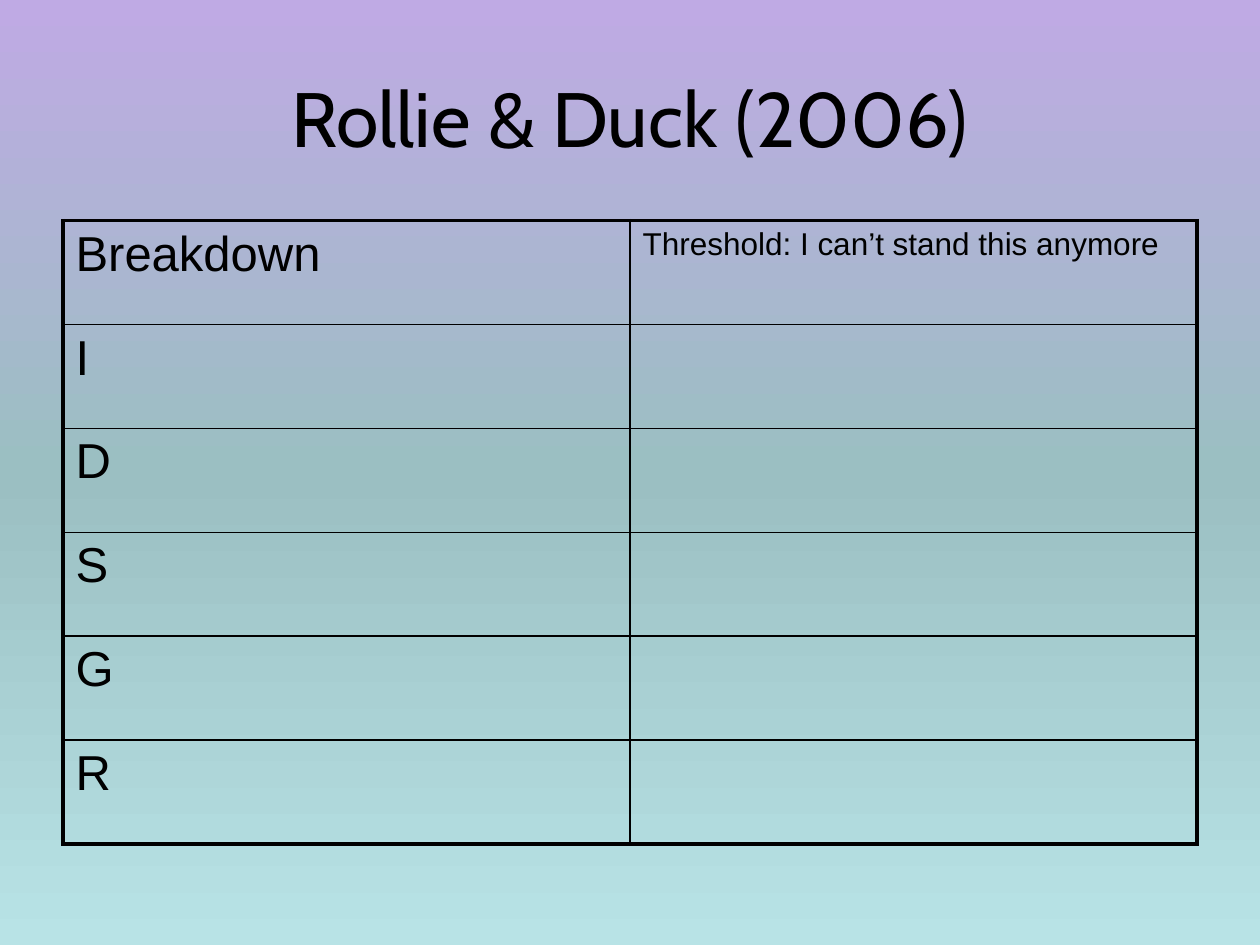
from lxml import etree
from pptx import Presentation
from pptx import util as u
from pptx.dml import color
from pptx.enum import text
from pptx.oxml import ns

COLORS = {"ink": "000000", "lilac": "BFAAE4", "teal": "9BBFC2", "aqua": "B8E3E6"}
LABELS = ["Breakdown", "I", "D", "S", "G", "R"]
THRESHOLD = "Threshold: I can’t stand this anymore"
THIN, THICK = 1, 2.25


def write(frame, words, size, font="Arial", align=text.PP_ALIGN.LEFT, before=None):
    paragraph = frame.paragraphs[0]
    paragraph.alignment = align
    if before:
        properties = paragraph._p.get_or_add_pPr()
        spacing = etree.SubElement(properties, ns.qn("a:spcBef"))
        etree.SubElement(spacing, ns.qn("a:spcPct"), val=str(before * 1000))
    run = paragraph.add_run()
    run.text = words
    run.font.size = u.Pt(size)
    run.font.name = font
    run.font.color.rgb = color.RGBColor.from_string(COLORS["ink"])


def add_color(parent, name):
    etree.SubElement(parent, ns.qn("a:srgbClr"), val=COLORS[name])


presentation = Presentation()
presentation.slide_width = u.Inches(10)
presentation.slide_height = u.Inches(7.5)
slide = presentation.slides.add_slide(presentation.slide_layouts[6])

# Background: three-colour gradient running downwards
fill = slide.background.fill
fill.gradient()
fill.gradient_angle = 270
stops = slide.element.xpath(".//a:gsLst")[0]
for stop in list(stops):
    stops.remove(stop)
for position, name in [(0, "lilac"), (50, "teal"), (100, "aqua")]:
    stop = etree.SubElement(stops, ns.qn("a:gs"), pos=str(position * 1000))
    add_color(stop, name)

# Title
title = slide.shapes.add_textbox(u.Inches(0.5), u.Inches(0.3), u.Inches(9), u.Inches(1.25))
title.text_frame.word_wrap = True
title.text_frame.vertical_anchor = text.MSO_ANCHOR.MIDDLE
write(title.text_frame, "Rollie & Duck (2006)", 44, font="Cabin", align=text.PP_ALIGN.CENTER)

# Table with equal rows and columns
table = slide.shapes.add_table(
    len(LABELS), 2, u.Inches(0.5), u.Inches(1.75), u.Inches(9), u.Inches(4.95)
).table
table.first_row = False
table.horz_banding = False
for row, label in enumerate(LABELS):
    write(table.cell(row, 0).text_frame, label, 28, before=20)
write(table.cell(0, 1).text_frame, THRESHOLD, 18, before=20)

# Cell borders: thick around the table, thin inside
last_row = len(LABELS) - 1
for row in range(len(LABELS)):
    for column in range(2):
        cell = table.cell(row, column)
        properties = cell._tc.get_or_add_tcPr()
        outer = {"L": column == 0, "R": column == 1, "T": row == 0, "B": row == last_row}
        for side, is_outer in outer.items():
            width = u.Pt(THICK if is_outer else THIN)
            line = etree.SubElement(properties, ns.qn(f"a:ln{side}"), w=str(width))
            add_color(etree.SubElement(line, ns.qn("a:solidFill")), "ink")
        cell.fill.background()

presentation.save("out.pptx")
